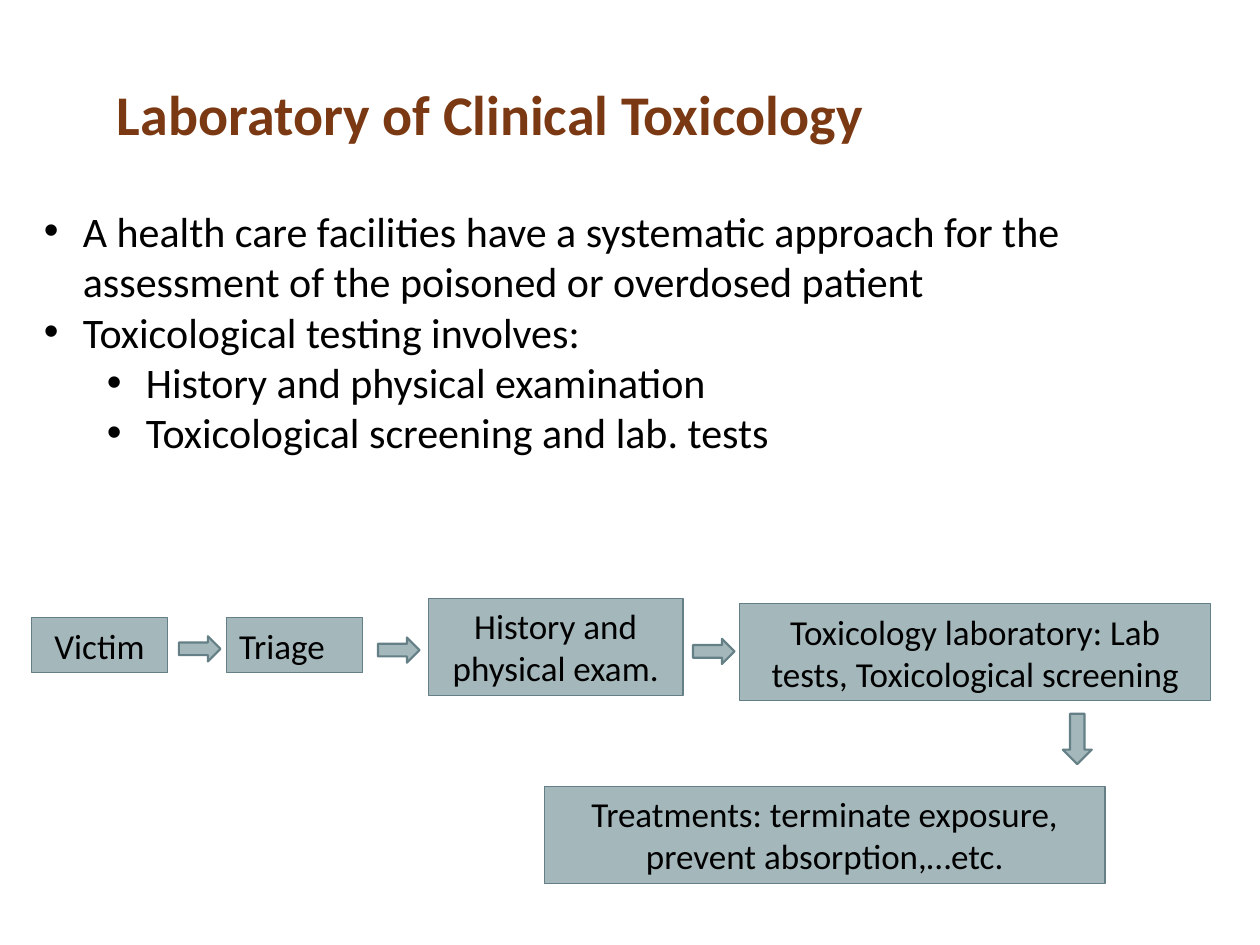
from lxml import etree
from pptx import Presentation, util as u
from pptx.dml.color import RGBColor
from pptx.enum import shapes, text
from pptx.oxml.ns import qn

FONT, BLACK, BROWN, FILL, LINE = "Calibri", "000000", "7B3913", "A4B7BB", "648086"
LEFT, CENTER = text.PP_ALIGN.LEFT, text.PP_ALIGN.CENTER


def color(value):
    return RGBColor.from_string(value)


def write(paragraph, words, size, value=BLACK, bold=False):
    run = paragraph.add_run()
    run.text = words
    run.font.name = FONT
    run.font.size = u.Pt(size)
    run.font.bold = bold
    run.font.color.rgb = color(value)


presentation = Presentation()
presentation.slide_width = u.Inches(10)
presentation.slide_height = u.Inches(7.5)
COLUMN = presentation.slide_width / 100
ROW = presentation.slide_height / 75
slide = presentation.slides.add_slide(presentation.slide_layouts[6])

title = slide.shapes.add_textbox(*map(int, (8.3 * COLUMN, 5.8 * ROW, 81.7 * COLUMN, 6.4 * ROW)))
title.text_frame.word_wrap = True
write(title.text_frame.paragraphs[0], "Laboratory of Clinical Toxicology", 32, BROWN, True)

bullets = [
    (0, "A health care facilities have a systematic approach for the assessment of the poisoned or overdosed patient"),
    (0, "Toxicological testing involves:"),
    (1, "History and physical examination"),
    (1, "Toxicological screening and lab. tests"),
]
body = slide.shapes.add_textbox(*map(int, (2.5 * COLUMN, 15.8 * ROW, 93.6 * COLUMN, 21.2 * ROW)))
body.text_frame.word_wrap = True
for index, (level, words) in enumerate(bullets):
    paragraph = body.text_frame.add_paragraph() if index else body.text_frame.paragraphs[0]
    paragraph.level = level
    properties = paragraph._p.get_or_add_pPr()
    properties.set("marL", str(u.Inches(0.31 + 0.5 * level)))
    properties.set("indent", str(u.Inches(-0.31)))
    etree.SubElement(properties, qn("a:buFont"), typeface="Arial")
    etree.SubElement(properties, qn("a:buChar"), char="•")
    write(paragraph, words, 24)

RECTANGLE, ARROW = shapes.MSO_SHAPE.RECTANGLE, shapes.MSO_SHAPE.RIGHT_ARROW
flow = [
    (RECTANGLE, 2.5, 49, 10.8, 4.4, 0, "Victim", CENTER),
    (ARROW, 14.2, 50.5, 3.3, 2, 0, "", CENTER),
    (RECTANGLE, 18, 49, 10.8, 4.4, 0, "Triage", LEFT),
    (ARROW, 30, 50.6, 3.3, 2, 0, "", CENTER),
    (RECTANGLE, 34, 47.5, 20.2, 7.7, 0, "History and physical exam.", CENTER),
    (ARROW, 55, 50.7, 3.3, 2, 0, "", CENTER),
    (RECTANGLE, 58.7, 47.9, 37.4, 7.7, 0, "Toxicology laboratory: Lab tests, Toxicological screening", CENTER),
    (ARROW, 83.5, 57.5, 4, 2.3, 90, "", CENTER),
    (RECTANGLE, 43.2, 62.4, 44.5, 7.7, 0, "Treatments: terminate exposure, prevent absorption,…etc.", CENTER),
]
for kind, left, top, width, height, rotation, words, alignment in flow:
    shape = slide.shapes.add_shape(
        kind, int(left * COLUMN), int(top * ROW), int(width * COLUMN), int(height * ROW))
    shape.rotation = rotation
    shape.shadow.inherit = False
    shape.fill.solid()
    shape.fill.fore_color.rgb = color(FILL)
    shape.line.color.rgb = color(LINE)
    shape.line.width = u.Pt(0.75 if words else 1.25)
    if words:
        shape.text_frame.word_wrap = True
        paragraph = shape.text_frame.paragraphs[0]
        paragraph.alignment = alignment
        write(paragraph, words, 20)

presentation.save("out.pptx")
